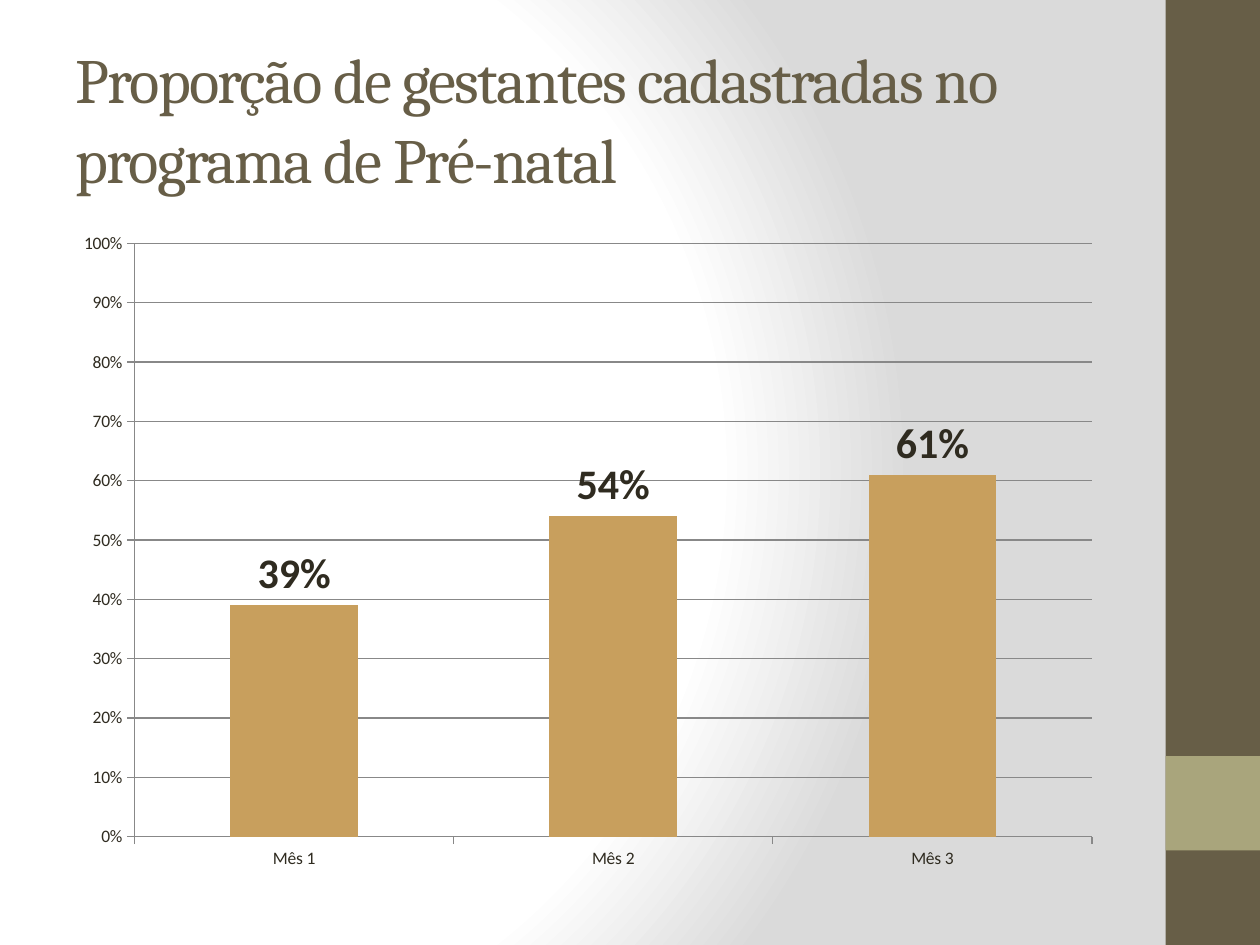
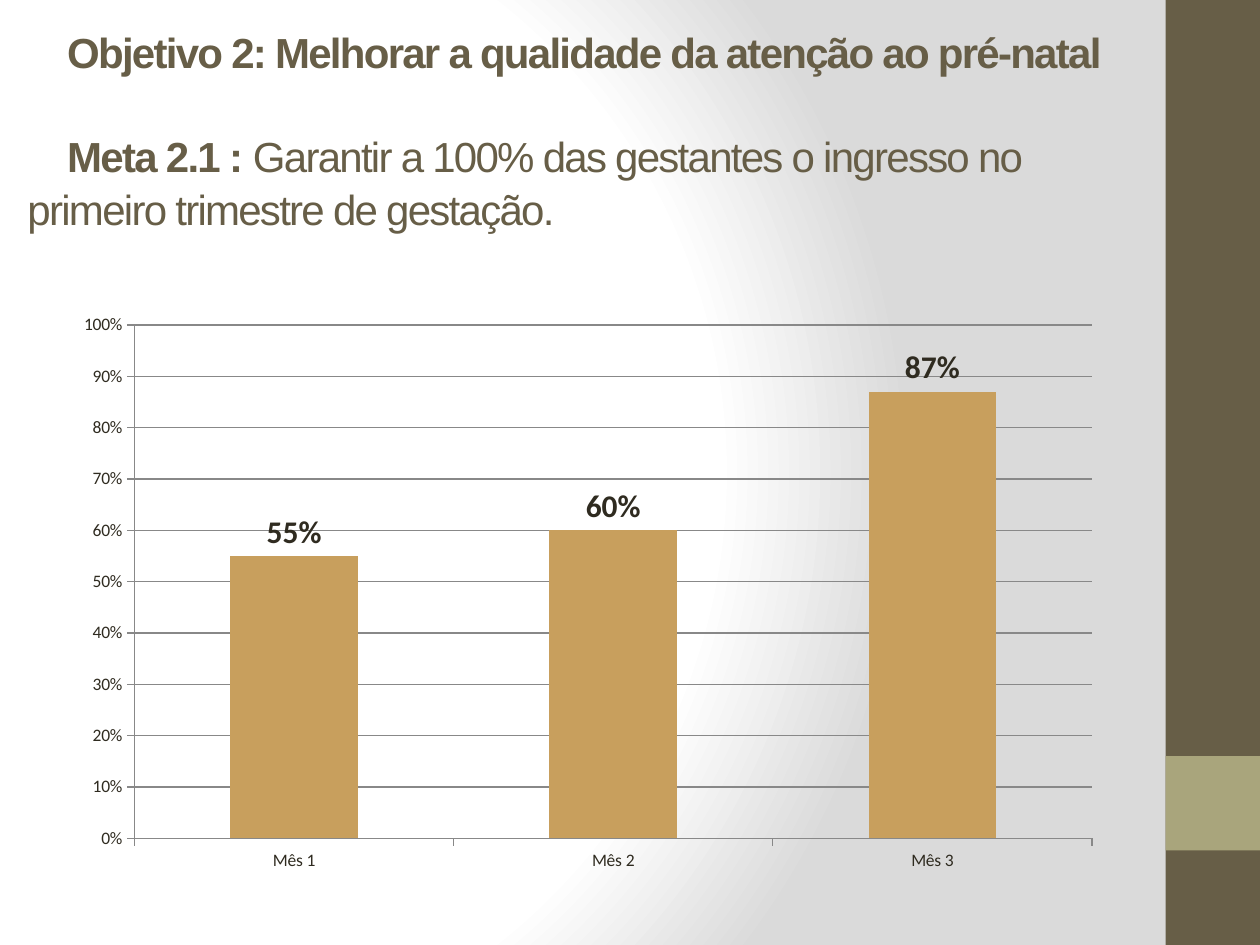
"""Build two slides on prenatal care, each with a title and a column chart."""
from pptx import Presentation
from pptx.chart.data import CategoryChartData
from pptx.dml.color import RGBColor
from pptx.enum.chart import XL_CHART_TYPE, XL_LABEL_POSITION, XL_TICK_MARK
from pptx.enum.shapes import MSO_SHAPE
from pptx.enum.text import MSO_ANCHOR
from pptx.oxml import parse_xml
from pptx.oxml.ns import nsdecls, qn
from pptx.util import Pt

COLUMN = XL_CHART_TYPE.COLUMN_CLUSTERED
ABOVE = XL_LABEL_POSITION.OUTSIDE_END
OUT, NONE = XL_TICK_MARK.OUTSIDE, XL_TICK_MARK.NONE
RECT = MSO_SHAPE.RECTANGLE
TOP, MIDDLE = MSO_ANCHOR.TOP, MSO_ANCHOR.MIDDLE

BROWN = RGBColor(0x67, 0x5E, 0x47)
SAGE = RGBColor(0xA9, 0xA5, 0x7C)
TAN = RGBColor(0xC8, 0x9F, 0x5D)
INK = RGBColor(0x2F, 0x2B, 0x20)
GREY = RGBColor(0x88, 0x88, 0x88)
WHITE = RGBColor(0xFF, 0xFF, 0xFF)
SILVER = RGBColor(0xDA, 0xDA, 0xDA)

MONTHS = ["Mês 1", "Mês 2", "Mês 3"]
STOPS = [(0, WHITE), (75, WHITE), (100, SILVER)]
BANDS = [(0, 540, BROWN), (432, 54, SAGE)]


def put(item, **values):
    """Set each named attribute of an item."""
    for name, value in values.items():
        setattr(item, name, value)


class Deck:
    """Hold the shared style and the current slide."""

    def __init__(self):
        self.prs = Presentation()
        put(self.prs, slide_width=Pt(720), slide_height=Pt(540))
        self.slide = None
        self.glow()

    def glow(self):
        """Give every slide the round white to silver background."""
        master = self.prs.slide_master
        master.background.fill.gradient()
        old = master.background._cSld.find(".//" + qn("a:gradFill"))
        stops = "".join(
            f'<a:gs pos="{pos * 1000}"><a:srgbClr val="{tone}"/></a:gs>'
            for pos, tone in STOPS)
        new = parse_xml(
            f'<a:gradFill {nsdecls("a")} rotWithShape="1">'
            f'<a:gsLst>{stops}</a:gsLst><a:path path="circle">'
            '<a:fillToRect l="20000" t="50000" r="100000" b="50000"/>'
            '</a:path></a:gradFill>')
        old.getparent().replace(old, new)

    def page(self):
        """Start a slide with the side bands."""
        self.slide = self.prs.slides.add_slide(self.prs.slide_layouts[6])
        for top, height, tone in BANDS:
            self.band(top, height, tone)

    def band(self, top, height, tone):
        """Draw one block of the right-hand band."""
        box = self.slide.shapes.add_shape(
            RECT, Pt(666), Pt(top), Pt(54), Pt(height))
        box.shadow.inherit = False
        box.fill.solid()
        box.fill.fore_color.rgb = tone
        box.line.fill.background()

    def title(self, area, paras, face, size, anchor=MIDDLE, indent=0, gap=0):
        """Write a title from paragraphs of (text, bold) runs."""
        box = self.slide.shapes.add_textbox(*map(Pt, area))
        frame = box.text_frame
        put(frame, word_wrap=True, vertical_anchor=anchor)
        for num, runs in enumerate(paras):
            para = frame.add_paragraph() if num else frame.paragraphs[0]
            put(para, line_spacing=1.05, space_before=Pt(gap if num else 0))
            para._p.get_or_add_pPr().set("indent", str(Pt(indent)))
            for text, bold in runs:
                run = para.add_run()
                run.text = text
                put(run.font, name=face, size=Pt(size), bold=bold)
                run.font.color.rgb = BROWN
                run._r.get_or_add_rPr().set("spc", "-100")

    def chart(self, top, height, values, size):
        """Add a percentage column chart with labels of the given size."""
        data = CategoryChartData(number_format="0%")
        data.categories = MONTHS
        data.add_series("Series 1", values)
        chart = self.slide.shapes.add_chart(
            COLUMN, Pt(36), Pt(top), Pt(600), Pt(height), data).chart
        put(chart, has_legend=False, has_title=False)
        put(chart.font, name="Calibri", size=Pt(10))
        chart.font.color.rgb = INK
        scale = chart.value_axis
        put(scale, minimum_scale=0, maximum_scale=1, major_unit=0.1,
            has_major_gridlines=True)
        put(scale.tick_labels, number_format="0%",
            number_format_is_linked=False)
        for axis in (scale, chart.category_axis):
            put(axis, major_tick_mark=OUT, minor_tick_mark=NONE)
        for part in (scale, chart.category_axis, scale.major_gridlines):
            part.format.line.width = Pt(0.75)
            part.format.line.color.rgb = GREY
        plot = chart.plots[0]
        put(plot, gap_width=150, vary_by_categories=False,
            has_data_labels=True)
        fill = plot.series[0].format.fill
        fill.solid()
        fill.fore_color.rgb = TAN
        labels = plot.data_labels
        put(labels, show_value=True, position=ABOVE, number_format="0%",
            number_format_is_linked=False)
        put(labels.font, name="Calibri", size=Pt(size), bold=True)
        labels.font.color.rgb = INK


def main():
    """Build and save both slides."""
    deck = Deck()
    deck.page()
    deck.title(
        (36, 21.6, 600, 90),
        [[("Proporção de gestantes cadastradas no programa de Pré-natal",
           False)]],
        "Cambria", 36)
    deck.chart(126, 378, [0.39, 0.54, 0.61], 24)

    deck.page()
    deck.title(
        (8.64, 10.4, 640.8, 125),
        [[("Objetivo 2: Melhorar a qualidade da atenção ao pré-natal", True)],
         [("Meta 2.1 : ", True),
          ("Garantir a 100% das gestantes o ingresso no primeiro trimestre "
           "de gestação.", False)]],
        "Arial", 24, anchor=TOP, indent=22.7, gap=29)
    deck.chart(173.5, 330.5, [0.55, 0.6, 0.87], 18)
    deck.prs.save("out.pptx")


if __name__ == "__main__":
    main()
